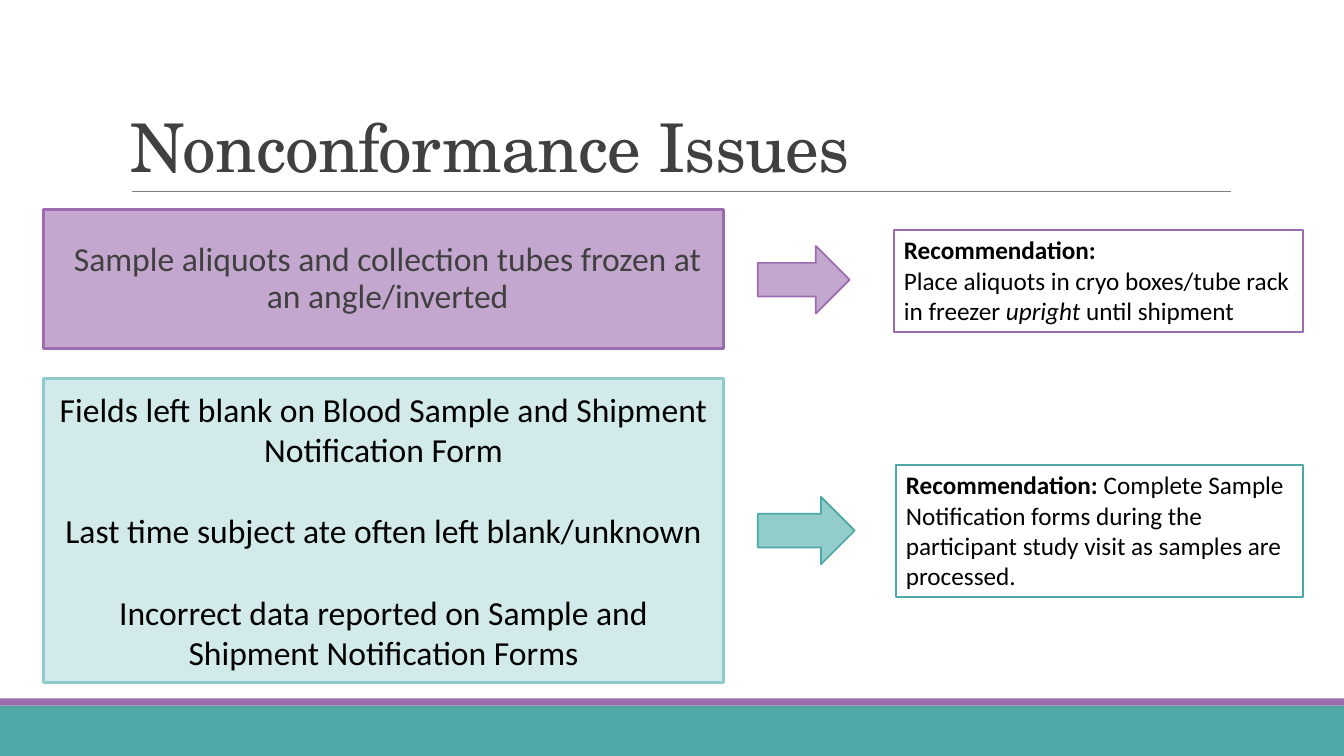
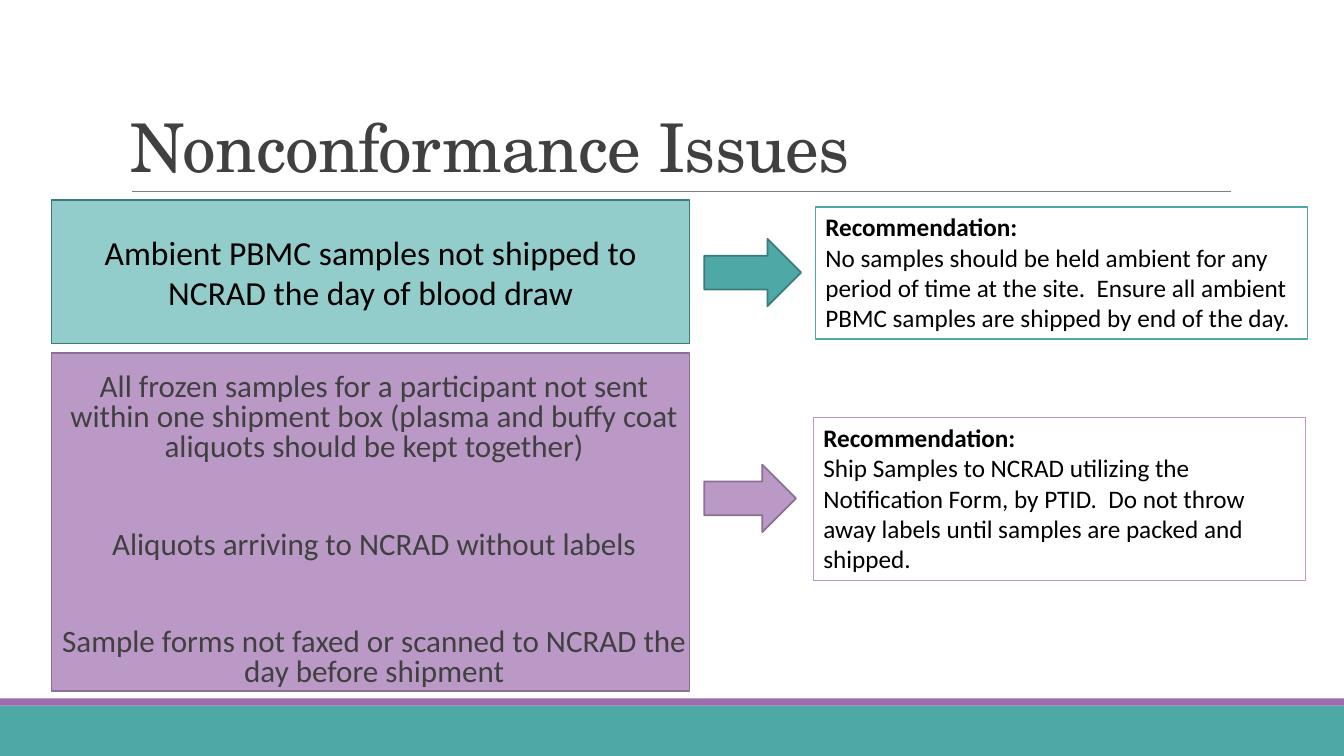
from lxml import etree
from pptx import Presentation
from pptx.dml.color import RGBColor
from pptx.enum.shapes import MSO_CONNECTOR, MSO_SHAPE
from pptx.enum.text import MSO_ANCHOR, PP_ALIGN
from pptx.oxml.ns import qn
from pptx.util import Cm, Pt

RECTANGLE, ARROW = MSO_SHAPE.RECTANGLE, MSO_SHAPE.RIGHT_ARROW
STRAIGHT = MSO_CONNECTOR.STRAIGHT
TOP, MIDDLE, BOTTOM = MSO_ANCHOR.TOP, MSO_ANCHOR.MIDDLE, MSO_ANCHOR.BOTTOM
LEFT, CENTER = PP_ALIGN.LEFT, PP_ALIGN.CENTER

COLORS = {
    "white": "FFFFFF", "black": "000000", "charcoal": "404040", "gray": "808080",
    "teal": "4EA8A5", "teal_dark": "3A7C7A", "teal_mid": "93CDCB",
    "teal_edge": "8FCBCA", "teal_pale": "D2EAEA",
    "purple": "9D6CAF", "purple_dark": "8A7193", "purple_mid": "BB99C7",
    "purple_pale": "C4A7CF",
}
SLIDE_WIDTH, SLIDE_HEIGHT = 33.87, 19.05
TITLE_FONT, BODY_FONT = "TeX Gyre Schola", "Calibri"
BOLD, ITALIC = {"bold": True}, {"italic": True}
HEADING = ("Recommendation:", BOLD)
ARROW_HEIGHT = 1.7

# Each row: an issue panel, an arrow and a recommendation.
# Boxes are left, top, width, height in centimetres.
SLIDES = [
    ("Nonconformance Issues", [
        {
            "panel": ((1.09, 5.28, 17.15, 3.51), "purple_pale", "purple", 2.25),
            "issues": ["Sample aliquots and collection tubes frozen at an angle/inverted"],
            "text": {"color": "charcoal", "spacing": 0.9},
            "frame": {"margin_left": Cm(0.46)},
            "arrow": ((19.1, 6.2, 2.31, ARROW_HEIGHT), "purple_pale", "purple"),
            "advice_box": ((22.53, 5.79, 10.31, 2.57), "purple"),
            "advice": [
                [HEADING],
                [("Place aliquots in cryo boxes/tube rack in freezer ", {}),
                 ("upright", ITALIC), (" until shipment", {})],
            ],
        },
        {
            "panel": ((1.09, 9.53, 17.15, 7.67), "teal_pale", "teal_edge", 2.25),
            "issues": [
                "Fields left blank on Blood Sample and Shipment Notification Form",
                "Last time subject ate often left blank/unknown",
                "Incorrect data reported on Sample and Shipment Notification Forms",
            ],
            "text": {"gap": 29.3},
            "arrow": ((19.1, 12.52, 2.44, ARROW_HEIGHT), "teal_mid", "teal"),
            "advice_box": ((22.58, 11.71, 10.26, 3.33), "teal"),
            "advice": [
                [("Recommendation: ", BOLD),
                 ("Complete Sample Notification forms during the participant "
                  "study visit as samples are processed.", {})],
            ],
        },
    ]),
    ("Nonconformance Issues", [
        {
            "panel": ((1.3, 5.05, 16.08, 3.61), "teal_mid", "teal_dark", 1.25),
            "issues": ["Ambient PBMC samples not shipped to NCRAD the day of blood draw"],
            "arrow": ((17.75, 6.02, 2.44, ARROW_HEIGHT), "teal", "teal_dark"),
            "advice_box": ((20.55, 5.21, 12.4, 3.33), "teal"),
            "advice": [
                [HEADING],
                [("No samples should be held ambient for any period of time at the "
                  "site.  Ensure all ambient PBMC samples are shipped by end of the "
                  "day.", {})],
            ],
        },
        {
            "panel": ((1.3, 8.89, 16.08, 8.53), "purple_mid", "purple_dark", 1.25),
            "issues": [
                "All frozen samples for a participant not sent within one shipment "
                "box (plasma and buffy coat aliquots should be kept together)",
                "Aliquots arriving to NCRAD without labels",
                "Sample forms not faxed or scanned to NCRAD the day before shipment",
            ],
            "text": {"size": 22.2, "color": "charcoal", "spacing": 0.8, "gap": 48.5},
            "frame": {"vertical_anchor": TOP, "margin_left": Cm(0.18),
                      "margin_top": Cm(0.53), "margin_right": 0, "margin_bottom": 0},
            "arrow": ((17.75, 11.71, 2.31, ARROW_HEIGHT), "purple_mid", "purple_dark"),
            "advice_box": ((20.5, 10.52, 12.4, 4.11), "purple_mid"),
            "advice": [
                [HEADING],
                [("Ship Samples to NCRAD utilizing the Notification Form, by PTID.  "
                  "Do not throw away labels until samples are packed and shipped.", {})],
            ],
        },
    ]),
]


def rgb(name):
    return RGBColor.from_string(COLORS[name])


def apply_format(target, values):
    for name, value in values.items():
        setattr(target, name, value)


def add_block(slide, kind, box, fill, line=None, width=1.25):
    shape = slide.shapes.add_shape(kind, *map(Cm, box))
    shape.shadow.inherit = False
    shape.fill.solid()
    shape.fill.fore_color.rgb = rgb(fill)
    if line:
        shape.line.color.rgb = rgb(line)
        shape.line.width = Pt(width)
    else:
        shape.line.fill.background()
    return shape


def write_text(shape, paragraphs, frame, font=BODY_FONT, size=24, color="black",
               align=CENTER, spacing=1.0, gap=0):
    """Fill a shape with paragraphs, each a list of (text, font format) runs."""
    text_frame = shape.text_frame
    apply_format(text_frame, {"word_wrap": True, **frame})
    for index, runs in enumerate(paragraphs):
        paragraph = text_frame.add_paragraph() if index else text_frame.paragraphs[0]
        apply_format(paragraph, {"alignment": align, "line_spacing": spacing,
                                 "space_before": Pt(gap if index else 0)})
        for text, style in runs:
            run = paragraph.add_run()
            run.text = text
            apply_format(run.font, {"name": font, "size": Pt(size), **style})
            run.font.color.rgb = rgb(color)


def add_title(slide, title):
    shape = slide.shapes.add_textbox(Cm(3.05), Cm(0.79), Cm(27.94), Cm(4.04))
    write_text(shape, [[(title, {})]], {"vertical_anchor": BOTTOM}, font=TITLE_FONT,
               size=48, color="charcoal", align=LEFT, spacing=0.85)
    # Letter spacing in hundredths of a point
    shape.text_frame.paragraphs[0].runs[0]._r.get_or_add_rPr().set("spc", "-50")


def add_frame(slide, title):
    # Footer bands
    add_block(slide, RECTANGLE, (0, 17.78, SLIDE_WIDTH, 1.27), "teal")
    add_block(slide, RECTANGLE, (0, 17.6, SLIDE_WIDTH, 0.18), "purple")
    # Rule under the title
    rule = slide.shapes.add_connector(STRAIGHT, Cm(3.33), Cm(4.83), Cm(31.01), Cm(4.83))
    rule.line.color.rgb = rgb("gray")
    rule.line.width = Pt(0.5)
    etree.SubElement(rule._element.spPr, qn("a:effectLst"))
    add_title(slide, title)


def add_row(slide, row):
    # Issue panel
    panel = add_block(slide, RECTANGLE, *row["panel"])
    write_text(panel, [[(issue, {})] for issue in row["issues"]],
               {"vertical_anchor": MIDDLE, **row.get("frame", {})},
               **row.get("text", {}))
    # Arrow
    add_block(slide, ARROW, *row["arrow"])
    # Recommendation
    box, line = row["advice_box"]
    advice = add_block(slide, RECTANGLE, box, "white", line)
    write_text(advice, row["advice"], {"vertical_anchor": TOP}, size=18, align=LEFT)


def main():
    presentation = Presentation()
    presentation.slide_width = Cm(SLIDE_WIDTH)
    presentation.slide_height = Cm(SLIDE_HEIGHT)
    blank_layout = presentation.slide_layouts[6]
    for title, rows in SLIDES:
        slide = presentation.slides.add_slide(blank_layout)
        add_frame(slide, title)
        for row in rows:
            add_row(slide, row)
    presentation.save("out.pptx")


if __name__ == "__main__":
    main()
